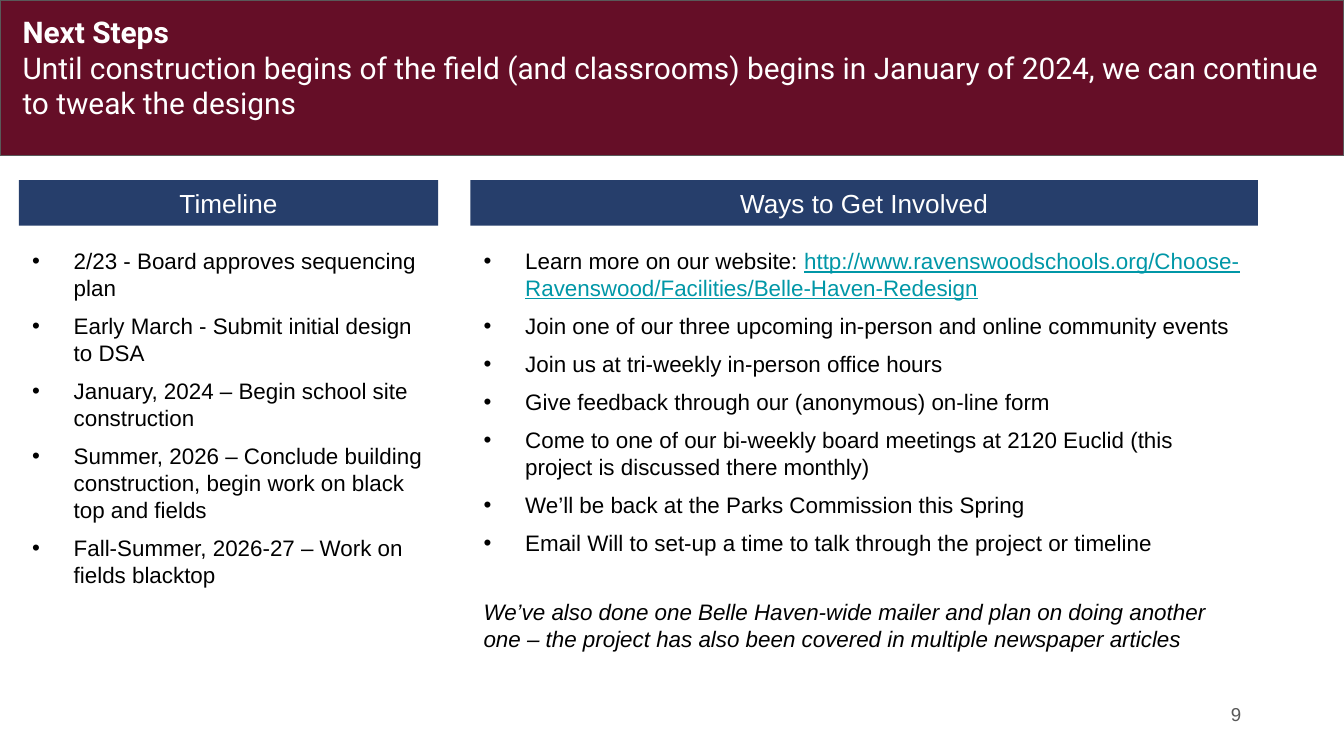
from pptx import Presentation
from pptx.dml.color import RGBColor as RGB
from pptx.enum.shapes import MSO_SHAPE as Shape
from pptx.enum.text import MSO_ANCHOR as Anchor, MSO_AUTO_SIZE as Fit, PP_ALIGN as Align
from pptx.oxml import parse_xml
from pptx.oxml.ns import nsdecls
from pptx.util import Inches, Pt

COLORS = {"maroon": "650E27", "navy": "263E6B", "gray": "595959",
          "white": "FFFFFF", "black": "000000", "link": "0097A7"}
TOP_HEAD, TOP_LIST = 1.34, 1.79

columns = [
    ("Timeline", 0.14, 3.12, 2.73, [
        "2/23 - Board approves sequencing plan",
        "Early March - Submit initial design to DSA",
        "January, 2024 – Begin school site construction",
        "Summer, 2026 – Conclude building construction, begin work on black top and fields",
        "Fall-Summer, 2026-27 – Work on fields blacktop",
    ]),
    ("Ways to Get Involved", 3.5, 5.86, 3.23, [
        "Learn more on our website: ",
        "Join one of our three upcoming in-person and online community events",
        "Join us at tri-weekly in-person office hours",
        "Give feedback through our (anonymous) on-line form",
        "Come to one of our bi-weekly board meetings at 2120 Euclid "
        "(this project is discussed there monthly)",
        "We’ll be back at the Parks Commission this Spring",
        "Email Will to set-up a time to talk through the project or timeline",
    ]),
]
site = "http://www.ravenswoodschools.org/Choose-Ravenswood/Facilities/Belle-Haven-Redesign"
note = ("We’ve also done one Belle Haven-wide mailer and plan on doing another one – "
        "the project has also been covered in multiple newspaper articles")

prs = Presentation()
prs.slide_width = Inches(10)
prs.slide_height = Inches(10 * 9 / 16)
slide = prs.slides.add_slide(prs.slide_layouts[6])


def add_box(left, top, width, height, fill=None, inset=0.1):
    """Add a text box, or a rectangle when a fill is given."""
    place = [Inches(n) for n in (left, top, width, height)]
    if fill:
        box = slide.shapes.add_shape(Shape.RECTANGLE, *place)
        box.shadow.inherit = False
        box.fill.solid()
        box.fill.fore_color.rgb = RGB.from_string(COLORS[fill])
        box.line.fill.background()
    else:
        box = slide.shapes.add_textbox(*place)
    frame = box.text_frame
    frame.word_wrap = True
    frame.margin_left = frame.margin_right = Inches(0.1)
    frame.margin_top = frame.margin_bottom = Inches(inset)
    return box


def add_run(para, text, size, color="black", face="Arial"):
    run = para.add_run()
    run.text = text
    run.font.size = Pt(size)
    run.font.name = face
    run.font.color.rgb = RGB.from_string(COLORS[color])
    return run


# Title band
band = add_box(0, 0, 10, 1.16, "maroon")
band.line.color.rgb = RGB.from_string(COLORS["gray"])
band.line.width = Pt(0.75)
para = add_box(0.07, 0, 9.87, 1.01).text_frame.paragraphs[0]
add_run(para, "Next Steps", 16, "white", "Roboto").font.bold = True
para.add_line_break()
add_run(para, "Until construction begins of the field (and classrooms) begins in "
        "January of 2024, we can continue to tweak the designs", 16, "white", "Roboto")

# Page number
frame = add_box(9.06, 5.1, 0.6, 0.43).text_frame
frame.vertical_anchor = Anchor.MIDDLE
add_run(frame.paragraphs[0], "9", 10, "gray")

# Headed columns of bullets
for head, left, width, height, items in columns:
    frame = add_box(left, TOP_HEAD, width, 0.34, "navy", 0.05).text_frame
    frame.vertical_anchor = Anchor.MIDDLE
    para = frame.paragraphs[0]
    para.alignment = Align.CENTER
    add_run(para, head, 14, "white")

    frame = add_box(left, TOP_LIST, width, height, inset=0.05).text_frame
    frame.auto_size = Fit.SHAPE_TO_FIT_TEXT
    for i, item in enumerate(items):
        para = frame.paragraphs[0] if i == 0 else frame.add_paragraph()
        para.space_after = Pt(6)
        props = para._p.get_or_add_pPr()
        props.set("marL", str(Inches(0.31)))
        props.set("indent", str(-Inches(0.31)))
        props.append(parse_xml(f'<a:buClr {nsdecls("a")}><a:srgbClr val="{COLORS["black"]}"/></a:buClr>'))
        props.append(parse_xml(f'<a:buFont {nsdecls("a")} typeface="Arial"/>'))
        props.append(parse_xml(f'<a:buChar {nsdecls("a")} char="•"/>'))
        add_run(para, item, 12)

# Link and closing note in the last column
add_run(frame.paragraphs[0], site, 12, "link").font.underline = True
para = frame.add_paragraph()
para.space_before, para.space_after = Pt(16.4), Pt(6)
add_run(para, note, 12).font.italic = True

prs.save("out.pptx")
